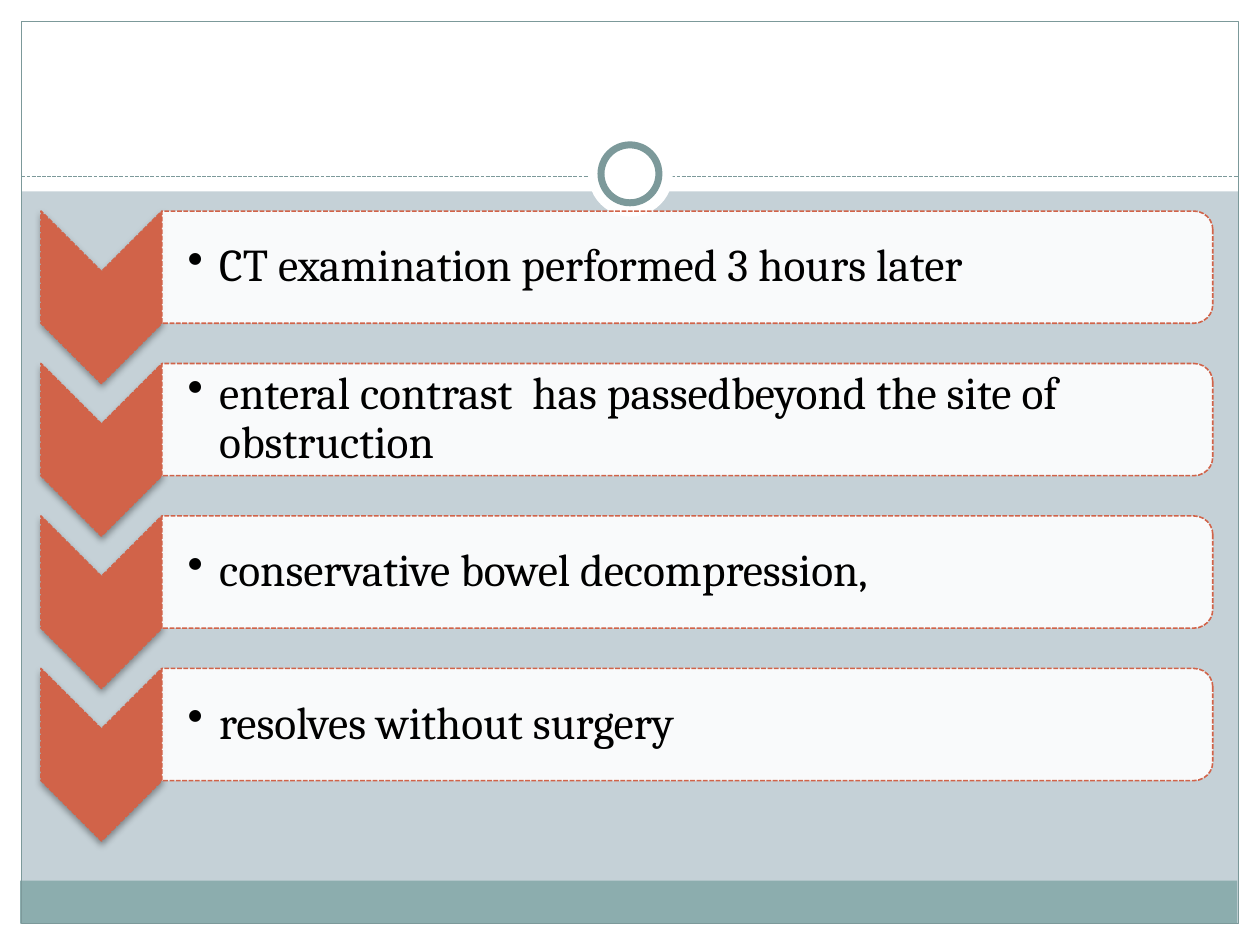
from lxml.etree import SubElement
from pptx import Presentation
from pptx.dml.color import RGBColor
from pptx.enum.dml import MSO_LINE
from pptx.enum.shapes import MSO_CONNECTOR, MSO_SHAPE
from pptx.enum.text import MSO_ANCHOR
from pptx.oxml.ns import qn
from pptx.util import Emu, Pt

PX_PER_INCH = 100
WHITE = "FFFFFF"
BLACK = "000000"
BACKGROUND = "C5D1D7"
TEAL = "8CADAE"
FRAME = "7C999A"
ORANGE = "D16349"
FIRST_ROW_TOP = 172
ROW_STEP = 121
STEPS = [
    "CT examination performed 3 hours later",
    "enteral contrast  has passedbeyond the site of obstruction",
    "conservative bowel decompression,",
    "resolves without surgery",
]


def px(length):
    return Emu(round(length * 914400 / PX_PER_INCH))


def color(value):
    return RGBColor.from_string(value)


def add_child(parent, tag, **attributes):
    return SubElement(parent, qn(tag), {key: str(value) for key, value in attributes.items()})


def style_line(line, line_color, width, dashed=False):
    line.color.rgb = color(line_color)
    line.width = Pt(width)
    if dashed:
        line.dash_style = MSO_LINE.SQUARE_DOT


def add_figure(slide, kind, box, fill=None, line=None, rotation=0):
    shape = slide.shapes.add_shape(kind, *map(px, box))
    shape.shadow.inherit = False
    shape.rotation = rotation
    if fill:
        shape.fill.solid()
        shape.fill.fore_color.rgb = color(fill)
    else:
        shape.fill.background()
    if line:
        style_line(shape.line, *line)
    else:
        shape.line.fill.background()
    return shape


def add_divider(slide, left, right, top):
    connector = slide.shapes.add_connector(
        MSO_CONNECTOR.STRAIGHT, px(left), px(top), px(right), px(top))
    style_line(connector.line, FRAME, 0.75, True)
    add_child(connector._element.spPr, "a:effectLst")


def add_frame(slide):
    for box in [(0, 733, 1000, 17), (0, 0, 1000, 152), (0, 0, 17, 750), (983, 0, 17, 750)]:
        add_figure(slide, MSO_SHAPE.RECTANGLE, box, WHITE)
    add_figure(slide, MSO_SHAPE.RECTANGLE, (16, 699, 966, 34), TEAL)
    add_figure(slide, MSO_SHAPE.RECTANGLE, (17, 17, 966, 716), line=(FRAME, 0.75))
    add_divider(slide, 17, 983, 140)
    add_figure(slide, MSO_SHAPE.OVAL, (467, 105, 67, 67), WHITE)
    add_figure(slide, MSO_SHAPE.OVAL, (477, 115, 46, 46), WHITE, (FRAME, 4))


def add_chevron(slide, top):
    shape = add_figure(slide, MSO_SHAPE.CHEVRON, (12, top + 16, 137, 96),
                       ORANGE, (ORANGE, 0.9, True), 90)
    effects = shape._element.spPr.find(qn("a:effectLst"))
    shadow = add_child(effects, "a:outerShdw", blurRad=Pt(4), dist=Pt(2),
                       dir=90 * 60000, rotWithShape=0)
    shadow_color = add_child(shadow, "a:srgbClr", val=BLACK)
    add_child(shadow_color, "a:alpha", val=35000)


def add_bar(slide, top):
    shape = add_figure(slide, MSO_SHAPE.ROUND_2_SAME_RECTANGLE, (501, top - 377, 89, 834),
                       WHITE, (ORANGE, 0.9, True), 90)
    fill_color = shape._element.spPr.find(qn("a:solidFill")).find(qn("a:srgbClr"))
    add_child(fill_color, "a:alpha", val=90000)


def add_bullet_text(slide, top, text):
    text_frame = slide.shapes.add_textbox(px(129), px(top), px(830), px(80)).text_frame
    text_frame.word_wrap = True
    text_frame.vertical_anchor = MSO_ANCHOR.MIDDLE
    text_frame.margin_left = px(20)
    text_frame.margin_right = text_frame.margin_top = text_frame.margin_bottom = px(2)
    text_frame.text = text
    paragraph = text_frame.paragraphs[0]
    paragraph.level = 1
    paragraph.line_spacing = 0.9
    font = paragraph.runs[0].font
    font.name = "Cambria"
    font.size = Pt(26)
    font.color.rgb = color(BLACK)
    properties = paragraph._p.get_or_add_pPr()
    properties.set("marL", str(px(25)))
    properties.set("indent", str(px(-25)))
    add_child(add_child(properties, "a:spcAft"), "a:spcPct", val=15000)
    add_child(properties, "a:buChar", char="•")


def main():
    presentation = Presentation()
    presentation.slide_width = px(1000)
    presentation.slide_height = px(750)
    slide = presentation.slides.add_slide(presentation.slide_layouts[6])
    slide.background.fill.solid()
    slide.background.fill.fore_color.rgb = color(BACKGROUND)
    add_frame(slide)
    for index, text in enumerate(STEPS):
        top = FIRST_ROW_TOP + index * ROW_STEP
        add_chevron(slide, top)
        add_bar(slide, top)
        add_bullet_text(slide, top, text)
    presentation.save("out.pptx")


if __name__ == "__main__":
    main()
